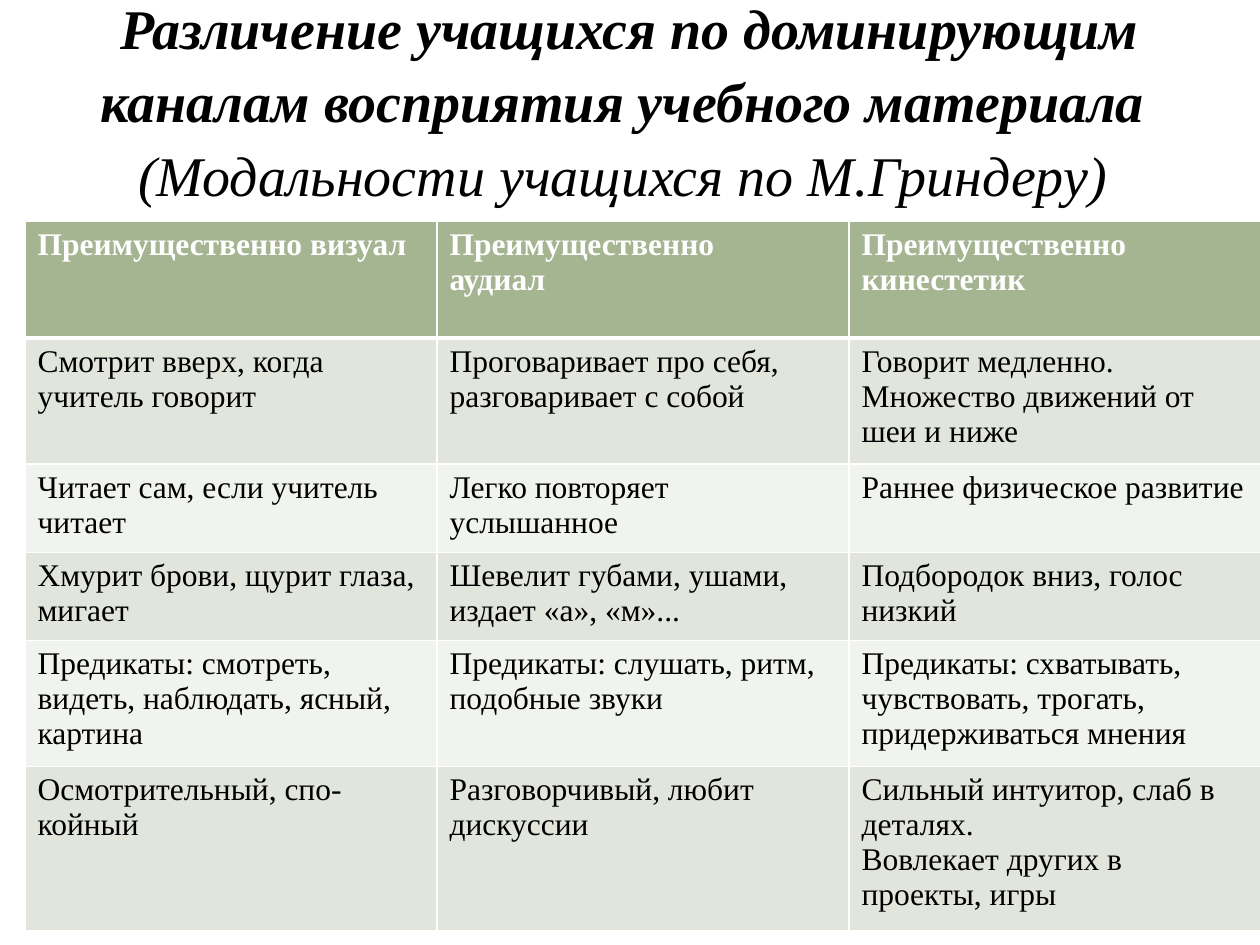
from lxml import etree
from pptx import Presentation
from pptx.dml.color import RGBColor
from pptx.enum.text import MSO_ANCHOR, PP_ALIGN
from pptx.oxml.ns import qn
from pptx.util import Pt

CENTER = PP_ALIGN.CENTER
MIDDLE = MSO_ANCHOR.MIDDLE
EMU_PER_INCH = 914400
PX_PER_INCH = 126
FONT = "Times New Roman"
COLORS = {
    "text": "000000",
    "header_text": "FFFFFF",
    "border": "FFFFFF",
    "header": "A5B592",
    "odd_row": "E1E5DC",
    "even_row": "F0F3EE",
}


def px(length):
    return round(length * EMU_PER_INCH / PX_PER_INCH)


def style_run(run, size, color, bold, italic=False):
    run.font.name = FONT
    run.font.size = Pt(size)
    run.font.bold = bold
    run.font.italic = italic
    run.font.color.rgb = RGBColor.from_string(COLORS[color])


presentation = Presentation()
presentation.slide_width = px(1260)
presentation.slide_height = px(945)
slide = presentation.slides.add_slide(presentation.slide_layouts[6])

# Title: bold statement, then a lighter line after the break
title = slide.shapes.add_textbox(px(63), 0, px(1134), px(195))
title_frame = title.text_frame
title_frame.word_wrap = True
title_frame.vertical_anchor = MIDDLE
title_frame.text = (
    "Различение учащихся по доминирующим каналам восприятия учебного материала "
    "\v(Модальности учащихся по М.Гриндеру) "
)
title_paragraph = title_frame.paragraphs[0]
title_paragraph.alignment = CENTER
title_paragraph.line_spacing = 1.09
for run, bold in zip(title_paragraph.runs, (True, False)):
    style_run(run, 32, "text", bold, italic=True)

# Table contents
rows = [
    ("Преимущественно визуал",
     "Преимущественно\nаудиал",
     "Преимущественно кинестетик"),
    ("Смотрит вверх, когда учитель говорит",
     "Проговаривает про себя, разговаривает с собой",
     "Говорит медленно. Множество движений от шеи и ниже"),
    ("Читает сам, если учитель читает",
     "Легко повторяет услышанное",
     "Раннее физическое развитие"),
    ("Хмурит брови, щурит глаза, мигает",
     "Шевелит губами, ушами, издает «а», «м»...",
     "Подбородок вниз, голос низкий"),
    ("Предикаты: смотреть, видеть, наблюдать, ясный, картина",
     "Предикаты: слушать, ритм, подобные звуки",
     "Предикаты: схватывать, чувствовать, трогать, придерживаться мнения"),
    ("Осмотрительный, спо-койный",
     "Разговорчивый, любит дискуссии",
     "Сильный интуитор, слаб в деталях.\nВовлекает других в проекты, игры"),
]
row_heights = [117, 118, 82, 82, 118, 154]
column_width = 412

# Table grid
table = slide.shapes.add_table(
    len(rows), 3, px(25), px(221), px(3 * column_width), px(sum(row_heights))
).table
for column in table.columns:
    column.width = px(column_width)
for row, height in zip(table.rows, row_heights):
    row.height = px(height)

# Cells: text, borders, banded fill
for row_index, texts in enumerate(rows):
    is_header = row_index == 0
    if is_header:
        fill = "header"
    else:
        fill = "odd_row" if row_index % 2 else "even_row"
    for column_index, text in enumerate(texts):
        cell = table.cell(row_index, column_index)
        cell.text_frame.text = text
        for paragraph in cell.text_frame.paragraphs:
            for run in paragraph.runs:
                style_run(run, 18, "header_text" if is_header else "text", is_header)

        # Border lines come before the fill in the cell properties
        properties = cell._tc.get_or_add_tcPr()
        for side in ("L", "R", "T", "B"):
            thick = (is_header and side == "B") or (row_index == 1 and side == "T")
            line = etree.SubElement(properties, qn(f"a:ln{side}"), w=str(Pt(3 if thick else 1)))
            solid = etree.SubElement(line, qn("a:solidFill"))
            etree.SubElement(solid, qn("a:srgbClr"), val=COLORS["border"])
        cell.fill.solid()
        cell.fill.fore_color.rgb = RGBColor.from_string(COLORS[fill])

presentation.save("out.pptx")
